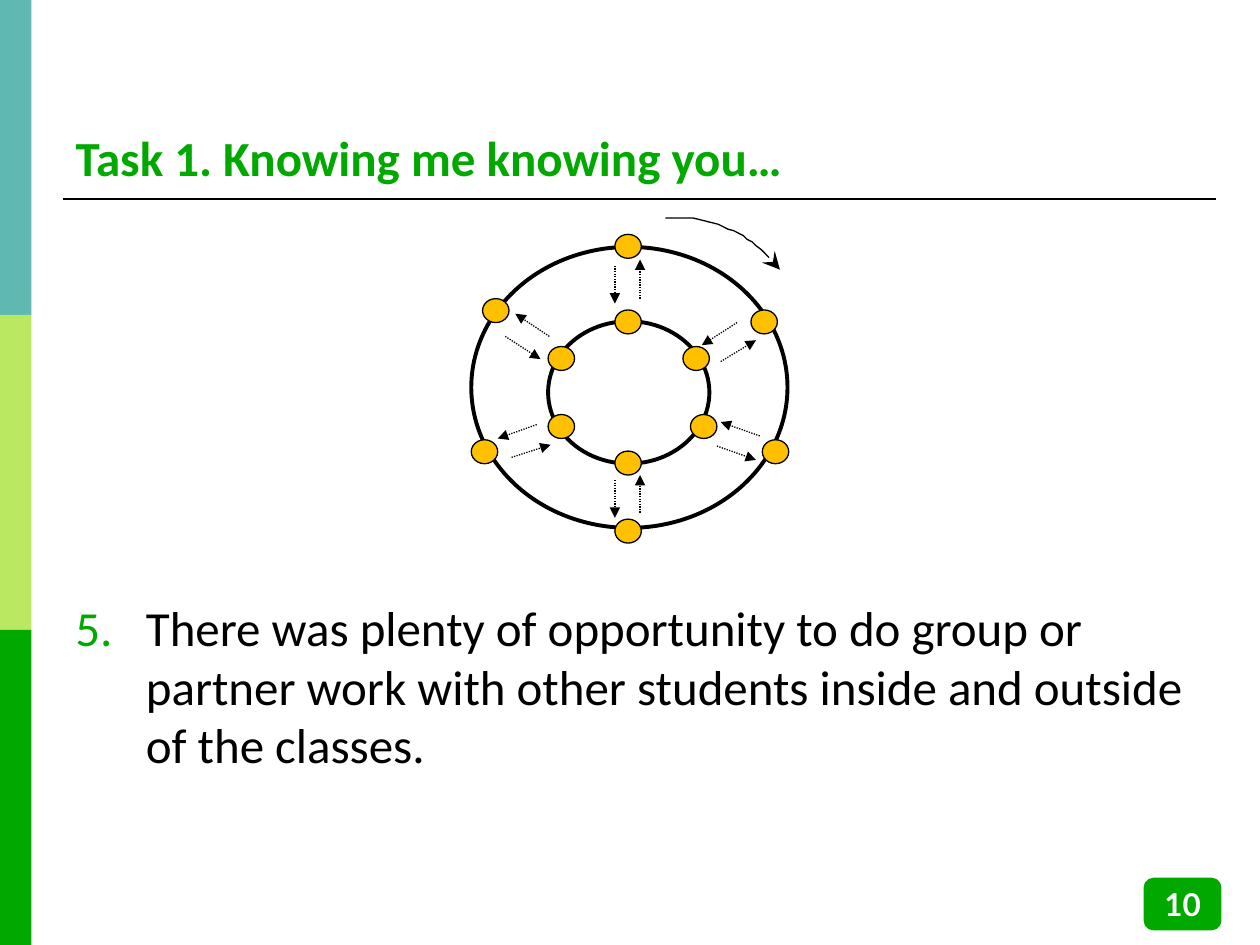
from dataclasses import dataclass

from lxml import etree
from pptx import Presentation
from pptx import util as u
from pptx.dml.color import RGBColor
from pptx.enum import dml, shapes, text
from pptx.oxml.ns import qn


@dataclass(frozen=True)
class Theme:
    teal: RGBColor = RGBColor(0x5F, 0xB8, 0xB2)
    lime: RGBColor = RGBColor(0xBA, 0xE8, 0x60)
    green: RGBColor = RGBColor(0x00, 0xA8, 0x00)
    amber: RGBColor = RGBColor(0xFF, 0xC0, 0x00)
    black: RGBColor = RGBColor(0x00, 0x00, 0x00)
    white: RGBColor = RGBColor(0xFF, 0xFF, 0xFF)
    main_font: str = "Calibri"
    number_font: str = "Lato"
    main_size: u.Pt = u.Pt(28)
    number_size: u.Pt = u.Pt(18)


theme = Theme()
PX = u.Inches(1) // 100  # 100 px to the inch


def add_figure(parent, preset, box, fill, line=None, width=0.75):
    figure = parent.add_shape(preset, *[n * PX for n in box])
    figure.shadow.inherit = False
    figure.fill.solid()
    figure.fill.fore_color.rgb = fill
    if line is None:
        figure.line.fill.background()
    else:
        figure.line.color.rgb = line
        figure.line.width = u.Pt(width)
    return figure


def add_line(parent, start, end, width=0.75, arrow=False):
    line = parent.add_connector(
        shapes.MSO_CONNECTOR.STRAIGHT, *[n * PX for n in (*start, *end)])
    line.line.color.rgb = theme.black
    line.line.width = u.Pt(width)
    if arrow:
        line.line.dash_style = dml.MSO_LINE.ROUND_DOT
        etree.SubElement(line.line._get_or_add_ln(), qn("a:tailEnd"), type="triangle")
    etree.SubElement(line._element.spPr, qn("a:effectLst"))


deck = Presentation()
deck.slide_width, deck.slide_height = 1000 * PX, 750 * PX
page = deck.slides.add_slide(deck.slide_layouts[5])

# Side bands and title rule
for row, colour in enumerate((theme.teal, theme.lime, theme.green)):
    add_figure(page.shapes, shapes.MSO_SHAPE.RECTANGLE, (0, row * 250, 25, 250), colour)
add_line(page.shapes, (50, 158), (965, 158), width=1.5)

# Title
title = page.shapes.title
title.left, title.top, title.width, title.height = [n * PX for n in (50, 28, 915, 125)]
frame = title.text_frame
frame.auto_size = text.MSO_AUTO_SIZE.NONE
frame.vertical_anchor = text.MSO_ANCHOR.BOTTOM
para = frame.paragraphs[0]
para.text = "Task 1. Knowing me knowing you…"
para.alignment = text.PP_ALIGN.LEFT
para.font.name, para.font.size, para.font.bold = theme.main_font, theme.main_size, True
para.font.color.rgb = theme.green

# Numbered statement
box = page.shapes.add_textbox(*[n * PX for n in (50, 469, 915, 201)])
box.text_frame.word_wrap = True
para = box.text_frame.paragraphs[0]
para.text = ("There was plenty of opportunity to do group or partner work "
             "with other students inside and outside of the classes.")
props = para._p.get_or_add_pPr()
props.set("marL", str(56 * PX))
props.set("indent", str(-56 * PX))
bullet_colour = etree.SubElement(props, qn("a:buClr"))
etree.SubElement(bullet_colour, qn("a:srgbClr"), val=str(theme.green))
etree.SubElement(props, qn("a:buAutoNum"), type="arabicPeriod", startAt="5")
para.font.name, para.font.size = theme.main_font, theme.main_size
para.font.color.rgb = theme.black

# Two rings of students facing each other
rings = page.shapes.add_group_shape().shapes
for ring in ((374, 196, 251, 223), (435, 255, 128, 113)):
    add_figure(rings, shapes.MSO_SHAPE.OVAL, ring, theme.white, theme.black, 2.25)

outer_students = [(488, 186), (383, 237), (374, 349), (488, 412), (596, 246), (605, 349)]
inner_students = [(488, 246), (435, 275), (435, 329), (488, 358), (542, 275), (548, 329)]
for left, top in outer_students + inner_students:
    add_figure(rings, shapes.MSO_SHAPE.FLOWCHART_CONNECTOR, (left, top, 21, 19),
               theme.amber, theme.black)

exchanges = [
    ((488, 211), (488, 241)), ((508, 237), (508, 206)),
    ((488, 381), (488, 411)), ((508, 407), (508, 377)),
    ((436, 267), (409, 249)), ((401, 267), (429, 285)),
    ((426, 337), (395, 348)), ((406, 363), (437, 353)),
    ((585, 256), (557, 274)), ((572, 287), (600, 270)),
    ((603, 346), (572, 335)), ((569, 354), (600, 365)),
]
for start, end in exchanges:
    add_line(rings, start, end, arrow=True)

# Rotation arrow, sampled along a cubic curve
controls = [(528, 173), (563, 170), (597, 185), (619, 214)]
steps = 24
curve = []
for step in range(steps + 1):
    t = step / steps
    weights = ((1 - t) ** 3, 3 * t * (1 - t) ** 2, 3 * t * t * (1 - t), t ** 3)
    curve.append([sum(w * point[axis] for w, point in zip(weights, controls))
                  for axis in (0, 1)])
builder = rings.build_freeform(*curve[0], scale=PX)
builder.add_line_segments(curve[1:], close=False)
rotation = builder.convert_to_shape()
rotation.shadow.inherit = False
rotation.fill.background()
rotation.line.color.rgb = theme.black
rotation.line.width = u.Pt(0.75)
etree.SubElement(rotation.line._get_or_add_ln(), qn("a:tailEnd"),
                 type="stealth", w="lg", len="lg")

# Page number
badge = add_figure(page.shapes, shapes.MSO_SHAPE.ROUNDED_RECTANGLE, (909, 698, 59, 39),
                   theme.green, theme.green, 2)
frame = badge.text_frame
frame.margin_left = frame.margin_right = 0
frame.vertical_anchor = text.MSO_ANCHOR.MIDDLE
para = frame.paragraphs[0]
para.text = "10"
para.alignment = text.PP_ALIGN.CENTER
para.font.name, para.font.size, para.font.bold = theme.number_font, theme.number_size, True
para.font.color.rgb = theme.white

deck.save("out.pptx")
